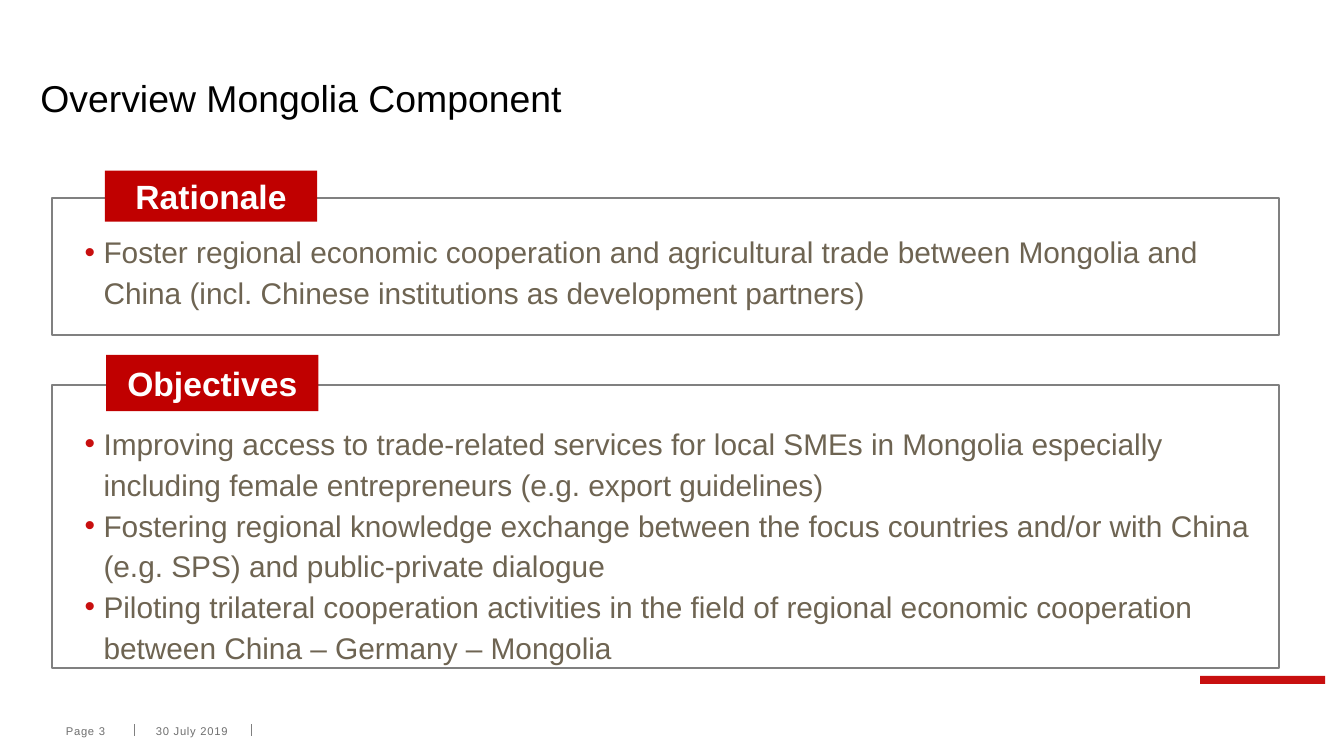
"""Build the slide on the rationale and objectives of the Mongolia component."""
from dataclasses import dataclass

from lxml.etree import SubElement
from pptx import Presentation
from pptx.dml.color import RGBColor
from pptx.enum.shapes import MSO_CONNECTOR, MSO_SHAPE
from pptx.enum.text import MSO_ANCHOR, MSO_AUTO_SIZE, PP_ALIGN
from pptx.oxml.ns import qn
from pptx.util import Inches, Pt

COLUMNS, ROWS = 100, 56.25
CELL = Inches(0.1)
FRAME_LEFT, FRAME_WIDTH = 3.9, 91.3
TAB_WIDTH = 15.8
FOOTER_TOP, FOOTER_HEIGHT = 53.9, 1


@dataclass(frozen=True)
class Theme:
    """Colours, type sizes and font of the slide."""
    font: str = "Arial"
    title: str = "000000"
    body: str = "6E6452"
    accent: str = "C80F0F"
    tab: str = "C00000"
    line: str = "808080"
    footer: str = "6F6F6F"
    white: str = "FFFFFF"
    title_size: int = 20
    tab_size: int = 18
    body_size: int = 16
    footer_size: int = 6


THEME = Theme()


def grid(*cells):
    """Turn columns and rows of the grid into slide lengths."""
    return [round(cell * CELL) for cell in cells]


def place(shape, *cells):
    """Move a placeholder to left, top, width and height on the grid."""
    shape.left, shape.top, shape.width, shape.height = grid(*cells)


def set_frame(frame, anchor, left=0, top=0, right=0, bottom=0):
    """Set the wrapping, anchor and insets in inches of a text frame."""
    frame.word_wrap = True
    frame.auto_size = MSO_AUTO_SIZE.NONE
    frame.vertical_anchor = anchor
    frame.margin_left, frame.margin_top = Inches(left), Inches(top)
    frame.margin_right, frame.margin_bottom = Inches(right), Inches(bottom)


def add_run(paragraph, text, size, color, bold=False):
    """Add one formatted run and return it."""
    run = paragraph.add_run()
    run.text = text
    run.font.name = THEME.font
    run.font.size = Pt(size)
    run.font.bold = bold
    run.font.color.rgb = RGBColor.from_string(color)
    return run


def add_bullet(paragraph):
    """Give a paragraph a hanging accent-coloured bullet."""
    properties = paragraph._p.get_or_add_pPr()
    properties.set("marL", str(Inches(0.24)))
    properties.set("indent", str(Inches(-0.14)))
    color = SubElement(properties, qn("a:buClr"))
    SubElement(color, qn("a:srgbClr"), val=THEME.accent)
    SubElement(properties, qn("a:buFont"), typeface=THEME.font)
    SubElement(properties, qn("a:buChar"), char="•")


def add_box(slide, cells, fill=None, line=None):
    """Add a flat rectangle with an optional fill and outline."""
    shape = slide.shapes.add_shape(MSO_SHAPE.RECTANGLE, *grid(*cells))
    shape.shadow.inherit = False
    if fill:
        shape.fill.solid()
        shape.fill.fore_color.rgb = RGBColor.from_string(fill)
    else:
        shape.fill.background()
    if line:
        shape.line.color.rgb = RGBColor.from_string(line)
        shape.line.width = Pt(1)
    else:
        shape.line.fill.background()
    return shape


def fill_title(title, text):
    """Place and write the slide title."""
    place(title, 3, 3.9, 63.8, 5.1)
    title.fill.solid()
    title.fill.fore_color.rgb = RGBColor.from_string(THEME.white)
    set_frame(title.text_frame, MSO_ANCHOR.BOTTOM, right=0.08)
    paragraph = title.text_frame.paragraphs[0]
    paragraph.alignment = PP_ALIGN.LEFT
    paragraph.line_spacing = 0.9
    add_run(paragraph, text, THEME.title_size, THEME.title)


def fill_list(body, top, height, items):
    """Place a body placeholder and write its bullet list."""
    place(body, FRAME_LEFT, top, FRAME_WIDTH, height)
    frame = body.text_frame
    set_frame(frame, MSO_ANCHOR.TOP, 0.14, 0.06, 0.14, 0.06)
    for index, item in enumerate(items):
        paragraph = frame.add_paragraph() if index else frame.paragraphs[0]
        add_bullet(paragraph)
        paragraph.line_spacing = 1.14
        paragraph.space_before = Pt(0)
        add_run(paragraph, item, THEME.body_size, THEME.body)


def add_tab(slide, heading, cells):
    """Add the red heading tab that sits on a frame."""
    tab = add_box(slide, cells, fill=THEME.tab)
    set_frame(tab.text_frame, MSO_ANCHOR.MIDDLE, top=0.06, bottom=0.06)
    paragraph = tab.text_frame.paragraphs[0]
    paragraph.alignment = PP_ALIGN.CENTER
    paragraph.space_after = Pt(2.1)
    add_run(paragraph, heading, THEME.tab_size, THEME.white, bold=True)


def add_footer_text(slide, text, left, width):
    """Add a small spaced text in the footer row."""
    box = slide.shapes.add_textbox(*grid(left, FOOTER_TOP, width, FOOTER_HEIGHT))
    set_frame(box.text_frame, MSO_ANCHOR.MIDDLE)
    run = add_run(box.text_frame.paragraphs[0], text, THEME.footer_size, THEME.footer)
    run.font._element.set("spc", "40")


def add_footer_divider(slide, column):
    """Add a short vertical line in the footer row."""
    ends = grid(column, FOOTER_TOP, column, FOOTER_TOP + 0.9)
    line = slide.shapes.add_connector(MSO_CONNECTOR.STRAIGHT, *ends)
    line.line.color.rgb = RGBColor.from_string(THEME.line)
    line.line.width = Pt(0.75)
    SubElement(line._element.spPr, qn("a:effectLst"))


def main():
    """Build and save the presentation."""
    presentation = Presentation()
    presentation.slide_width, presentation.slide_height = grid(COLUMNS, ROWS)
    slide = presentation.slides.add_slide(presentation.slide_layouts[3])
    title, rationale, objectives = slide.placeholders

    fill_title(title, "Overview Mongolia Component")
    fill_list(rationale, 16.45, 10.4, [
        "Foster regional economic cooperation and agricultural trade between "
        "Mongolia and China (incl. Chinese institutions as development partners)",
    ])
    fill_list(objectives, 30.7, 17, [
        "Improving access to trade-related services for local SMEs in Mongolia "
        "especially including female entrepreneurs (e.g. export guidelines)",
        "Fostering regional knowledge exchange between the focus countries "
        "and/or with China (e.g. SPS) and public-private dialogue",
        "Piloting trilateral cooperation activities in the field of regional "
        "economic cooperation between China – Germany – Mongolia",
    ])

    for top, height in ((14.75, 10.2), (28.63, 21.1)):
        add_box(slide, (FRAME_LEFT, top, FRAME_WIDTH, height), line=THEME.line)
    add_tab(slide, "Rationale", (7.8, 12.7, TAB_WIDTH, 3.8))
    add_tab(slide, "Objectives", (7.9, 26.4, TAB_WIDTH, 4.2))

    add_box(slide, (89.3, 50.3, 9.3, 0.6), fill=THEME.accent)
    for column in (10, 18.7):
        add_footer_divider(slide, column)
    add_footer_text(slide, "Page 3", 4.9, 4.9)
    add_footer_text(slide, "30 July 2019", 11.6, 5.8)
    presentation.save("out.pptx")


if __name__ == "__main__":
    main()
